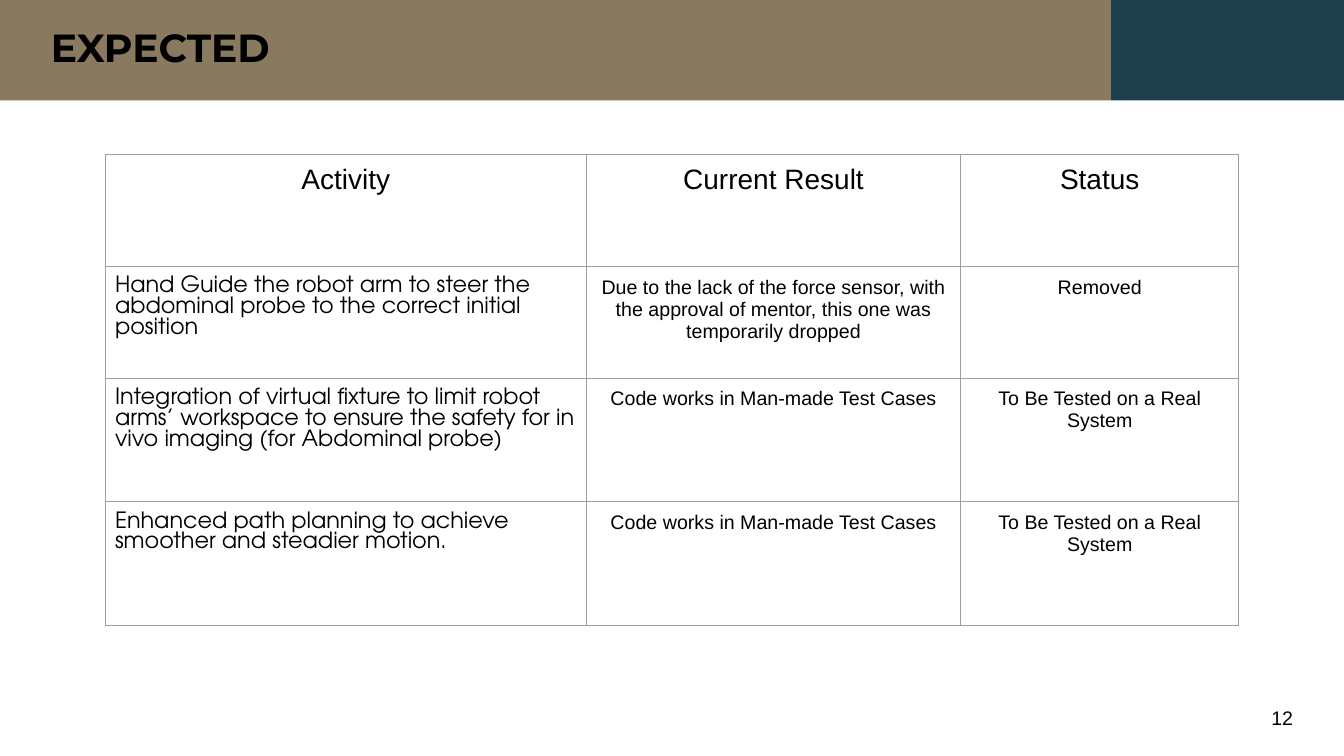
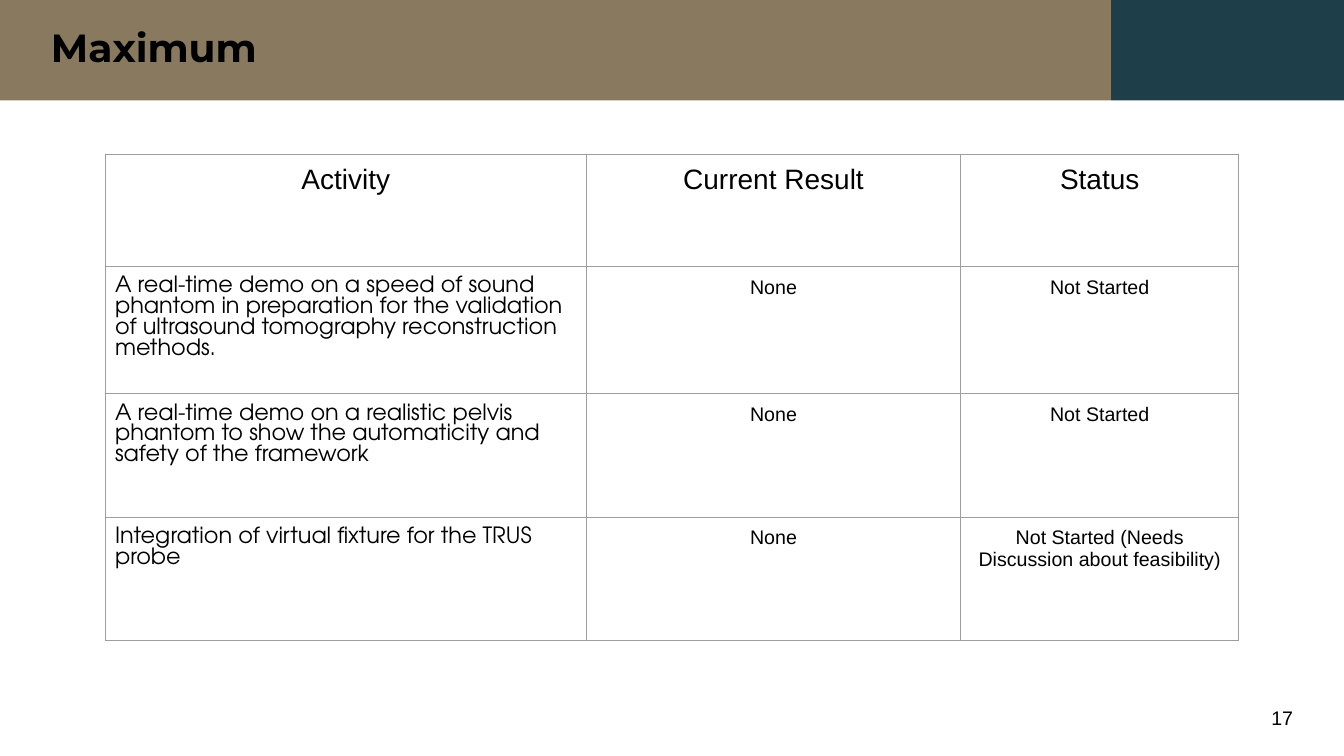
from lxml import etree
from pptx import Presentation
from pptx.dml.color import RGBColor
from pptx.enum.shapes import MSO_SHAPE
from pptx.enum.text import MSO_ANCHOR, MSO_AUTO_SIZE, PP_ALIGN
from pptx.oxml.ns import qn
from pptx.util import Cm, Pt

RECT = MSO_SHAPE.RECTANGLE
LEFT, CENTER, RIGHT = PP_ALIGN.LEFT, PP_ALIGN.CENTER, PP_ALIGN.RIGHT
MIDDLE = MSO_ANCHOR.MIDDLE
NO_FIT = MSO_AUTO_SIZE.NONE

# Shared look
WIDTH, HEIGHT = 33.87, 19.05
BAND_H, SPLIT = 2.53, 28
TAN, TEAL, BLACK, GREY = "89795E", "1E3E4A", "000000", "9E9E9E"
SANS, HEAD, ROUND = "Arial", "Montserrat", "TeX Gyre Adventor"

# Table grid
COLS = (12.13, 9.43, 7.01)
ROWS = (2.83, 2.82, 3.11, 3.11)
HEADS = ("Activity", "Current Result", "Status")
TESTED = ("Code works in Man-made Test Cases", "To Be Tested on a Real System")

SLIDES = [
    ("EXPECTED", "12", [
        ("Hand Guide the robot arm to steer the abdominal probe to the "
         "correct initial position",
         "Due to the lack of the force sensor, with the approval of mentor, "
         "this one was temporarily dropped",
         "Removed"),
        ("Integration of virtual fixture to limit robot arms’ workspace to "
         "ensure the safety for in vivo imaging (for Abdominal probe)",
         *TESTED),
        ("Enhanced path planning to achieve smoother and steadier motion.",
         *TESTED),
    ]),
    ("Maximum", "17", [
        ("A real-time demo on a speed of sound phantom in preparation for "
         "the validation of ultrasound tomography reconstruction methods.",
         "None", "Not Started"),
        ("A real-time demo on a realistic pelvis phantom to show the "
         "automaticity and safety of the framework",
         "None", "Not Started"),
        ("Integration of virtual fixture for the TRUS probe",
         "None", "Not Started (Needs Discussion about feasibility)"),
    ]),
]


def color(code):
    return RGBColor.from_string(code)


def write(frame, text, font, size, align, bold=False):
    frame.text = text
    para = frame.paragraphs[0]
    para.alignment = align
    para.font.name = font
    para.font.size = Pt(size)
    para.font.bold = bold
    para.font.color.rgb = color(BLACK)


def add_band(slide, layout, left, width, fill):
    """Draw a header band and hand it to the layout, behind its text."""
    band = slide.shapes.add_shape(RECT, Cm(left), 0, Cm(width), Cm(BAND_H))
    band.shadow.inherit = False
    band.fill.solid()
    band.fill.fore_color.rgb = color(fill)
    band.line.fill.background()
    layout.shapes._spTree.insert(2, band._element)


def set_title(slide, text):
    title = slide.shapes.title
    title.left, title.top = Cm(1.03), 0
    title.width, title.height = Cm(25.93), Cm(BAND_H)
    frame = title.text_frame
    frame.auto_size = NO_FIT
    frame.vertical_anchor = MIDDLE
    write(frame, text, HEAD, 28, LEFT, True)
    frame.paragraphs[0].line_spacing = 0.9


def add_number(slide, text):
    box = slide.shapes.add_textbox(Cm(25.22), Cm(17.67), Cm(7.62), Cm(1.02))
    box.text_frame.word_wrap = True
    write(box.text_frame, text, SANS, 14, RIGHT)


def set_border(cell):
    props = cell._tc.get_or_add_tcPr()
    for spot, side in enumerate(("lnL", "lnR", "lnT", "lnB")):
        line = etree.Element(qn("a:" + side), w=str(Pt(0.75)))
        fill = etree.SubElement(line, qn("a:solidFill"))
        etree.SubElement(fill, qn("a:srgbClr"), val=GREY)
        props.insert(spot, line)


def add_grid(slide, rows):
    table = slide.shapes.add_table(
        len(ROWS), len(COLS), Cm(2.65), Cm(3.88),
        Cm(sum(COLS)), Cm(sum(ROWS))).table
    table.first_row = table.horz_banding = False
    for col, width in zip(table.columns, COLS):
        col.width = Cm(width)
    for row, height, texts in zip(table.rows, ROWS, [HEADS, *rows]):
        row.height = Cm(height)
        for spot, (cell, text) in enumerate(zip(row.cells, texts)):
            cell.fill.background()
            cell.margin_left = cell.margin_right = Cm(0.25)
            cell.margin_top = cell.margin_bottom = Cm(0.25)
            set_border(cell)
            if texts is HEADS:
                write(cell.text_frame, text, SANS, 20, CENTER)
            elif spot == 0:
                write(cell.text_frame, text, ROUND, 16, LEFT)
            else:
                write(cell.text_frame, text, SANS, 14, CENTER)


def main():
    deck = Presentation()
    deck.slide_width, deck.slide_height = Cm(WIDTH), Cm(HEIGHT)
    layout = deck.slide_layouts[5]
    for title, number, rows in SLIDES:
        slide = deck.slides.add_slide(layout)
        set_title(slide, title)
        add_number(slide, number)
        add_grid(slide, rows)

    # Header bands, shared through the layout
    add_band(slide, layout, 0, SPLIT, TAN)
    add_band(slide, layout, SPLIT, WIDTH - SPLIT, TEAL)
    deck.save("out.pptx")


if __name__ == "__main__":
    main()
